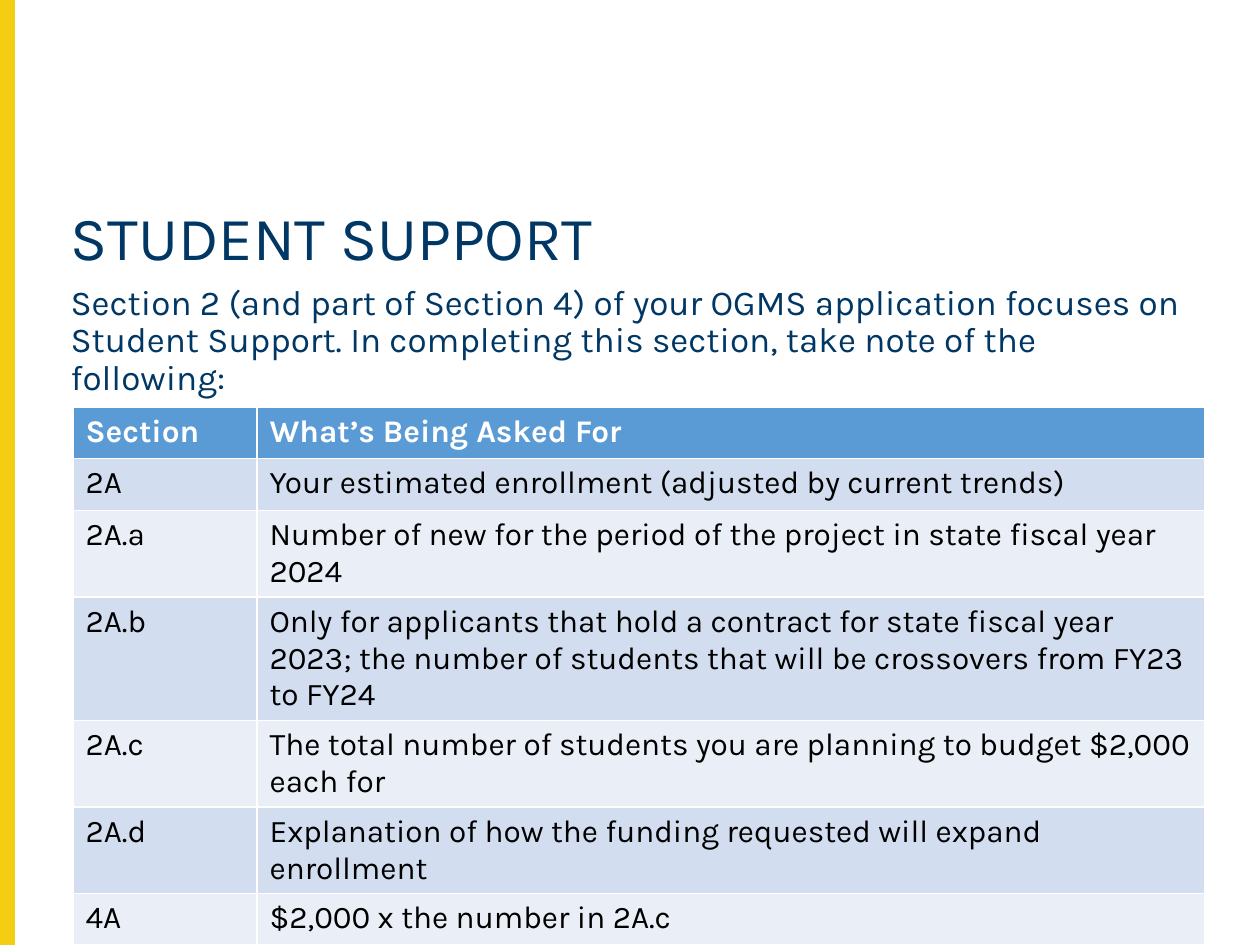
import dataclasses

import lxml.etree
import pptx
import pptx.dml.color
import pptx.enum.shapes
import pptx.enum.text
import pptx.oxml.ns
import pptx.util

Inches = pptx.util.Inches


@dataclasses.dataclass
class Theme:
    font: str = "Karla"
    navy: str = "003764"
    gold: str = "F4CE12"
    white: str = "FFFFFF"
    black: str = "000000"
    head: str = "5B9BD5"
    bands: tuple = ("D2DEEF", "EAEFF7")
    title: int = 35
    body: int = 20
    cell: int = 18


class Deck:
    """Holds the theme and the slide being built."""

    def __init__(self, theme):
        self.theme = theme
        self.show = pptx.Presentation()
        self.show.slide_width = Inches(10)
        self.show.slide_height = Inches(7.5)
        self.slide = self.show.slides.add_slide(self.show.slide_layouts[1])

    def paint(self, fill, color):
        fill.solid()
        fill.fore_color.rgb = pptx.dml.color.RGBColor.from_string(color)

    def style(self, para, size, color, bold=False):
        for run in para.runs:
            font = run.font
            font.name = self.theme.font
            font.size = pptx.util.Pt(size)
            font.bold = bold
            font.color.rgb = pptx.dml.color.RGBColor.from_string(color)

    def bar(self, left, top, width, height):
        shape = self.slide.shapes.add_shape(
            pptx.enum.shapes.MSO_SHAPE.RECTANGLE, left, top, width, height)
        shape.shadow.inherit = False
        self.paint(shape.fill, self.theme.gold)
        self.paint(shape.line.fill, self.theme.gold)
        shape.line.width = pptx.util.Pt(1)

    def fill_holder(self, index, text, size, left, top, width, height):
        """Place a template placeholder and set its text flush left, unbulleted."""
        holder = self.slide.placeholders[index]
        holder.left, holder.top = left, top
        holder.width, holder.height = width, height
        frame = holder.text_frame
        frame.text = text
        frame.word_wrap = True
        frame.auto_size = pptx.enum.text.MSO_AUTO_SIZE.NONE
        frame.vertical_anchor = pptx.enum.text.MSO_ANCHOR.TOP
        para = frame.paragraphs[0]
        props = para._p.get_or_add_pPr()
        props.set("marL", "0")
        props.set("indent", "0")
        lxml.etree.SubElement(props, pptx.oxml.ns.qn("a:buNone"))
        para.alignment = pptx.enum.text.PP_ALIGN.LEFT
        para.line_spacing = 0.9
        para.space_before = pptx.util.Pt(0)
        self.style(para, size, self.theme.navy)

    def table(self, rows, left, top, widths, height):
        """Draw a table with a header row and two alternating bands."""
        theme = self.theme
        grid = self.slide.shapes.add_table(
            len(rows), len(widths), left, top, sum(widths), height * len(rows)).table
        for column, width in zip(grid.columns, widths):
            column.width = width
        for r, row in enumerate(rows):
            header = r == 0
            back = theme.head if header else theme.bands[(r - 1) % 2]
            color = theme.white if header else theme.black
            for c, text in enumerate(row):
                cell = grid.cell(r, c)
                cell.text_frame.text = text
                self.paint(cell.fill, back)
                self.style(cell.text_frame.paragraphs[0], theme.cell, color, header)


ROWS = [
    ("Section", "What’s Being Asked For"),
    ("2A", "Your estimated enrollment (adjusted by current trends)"),
    ("2A.a", "Number of new for the period of the project in state fiscal year 2024"),
    ("2A.b", "Only for applicants that hold a contract for state fiscal year 2023; "
             "the number of students that will be crossovers from FY23 to FY24"),
    ("2A.c", "The total number of students you are planning to budget $2,000 each for"),
    ("2A.d", "Explanation of how the funding requested will expand enrollment"),
    ("4A", "$2,000 x the number in 2A.c"),
]
INTRO = ("Section 2 (and part of Section 4) of your OGMS application focuses on "
         "Student Support. In completing this section, take note of the following:")


def main():
    theme = Theme()
    deck = Deck(theme)
    deck.bar(Inches(0), Inches(0), Inches(0.11), Inches(7.5))
    deck.fill_holder(0, "STUDENT SUPPORT", theme.title,
                     Inches(0.46), Inches(1.6), Inches(9.33), Inches(0.79))
    deck.fill_holder(1, INTRO, theme.body,
                     Inches(0.46), Inches(2.21), Inches(9.09), Inches(0.92))
    deck.table(ROWS, Inches(0.58), Inches(3.23),
               [Inches(1.46), Inches(7.52)], Inches(0.41))
    deck.show.save("out.pptx")


if __name__ == "__main__":
    main()
